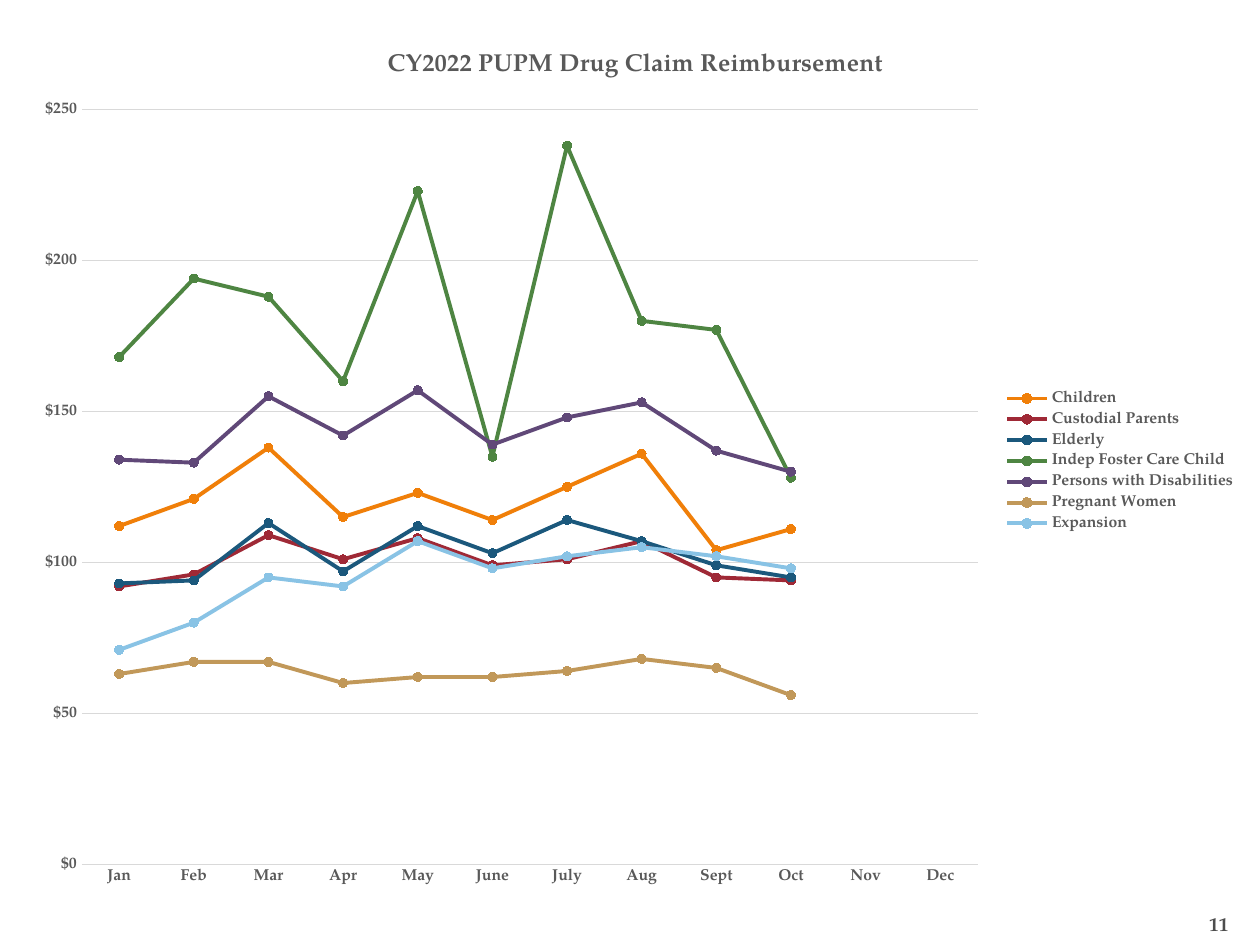
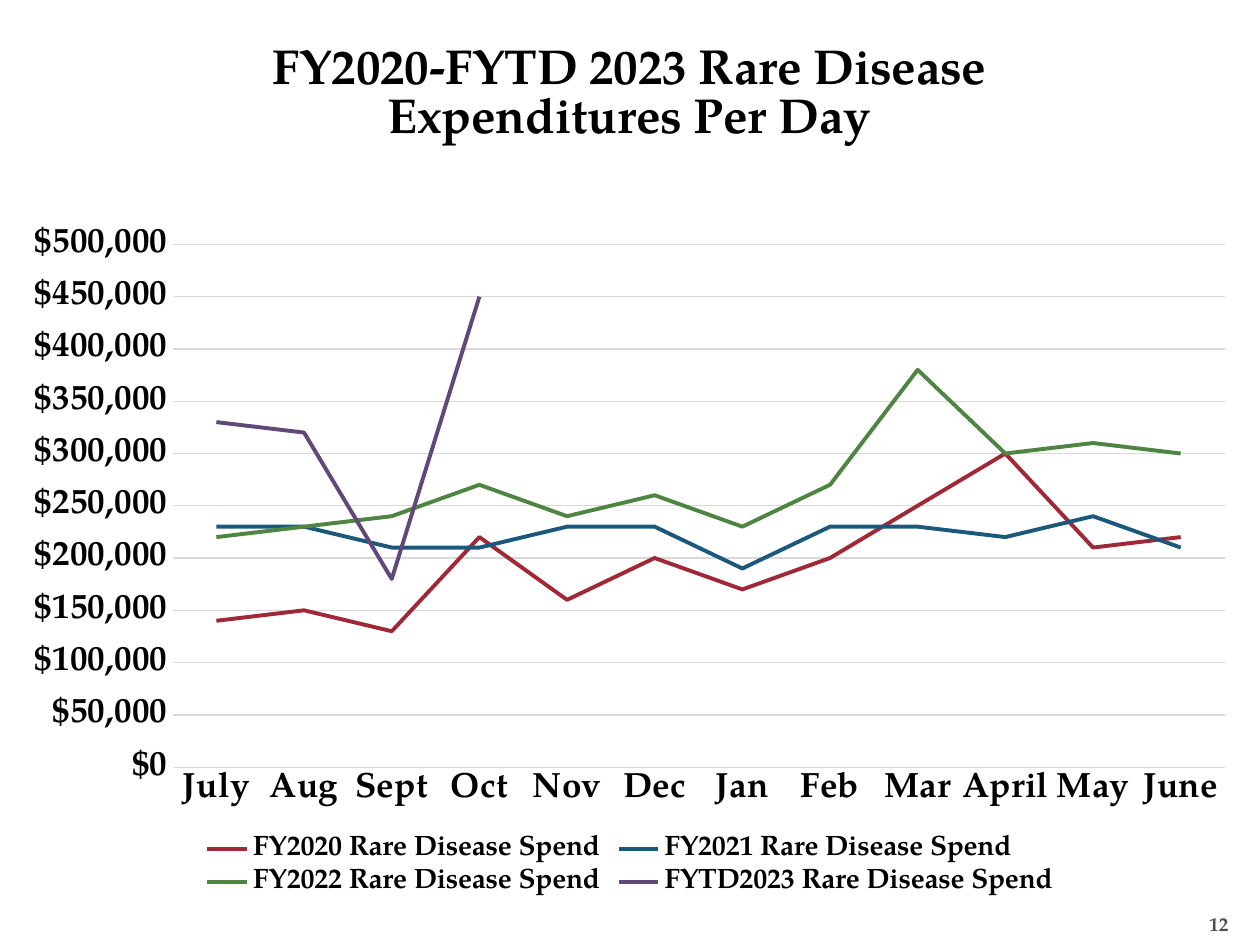
from pptx import Presentation
from pptx.chart.data import CategoryChartData
from pptx.dml.color import RGBColor
from pptx.enum.chart import (XL_CHART_TYPE as CT, XL_LEGEND_POSITION as LP,
                             XL_MARKER_STYLE as MS, XL_TICK_MARK as TM)
from pptx.enum.text import MSO_ANCHOR, PP_ALIGN
from pptx.oxml import parse_xml
from pptx.oxml.ns import nsdecls
from pptx.util import Inches, Pt

FONT = "TeX Gyre Pagella"
COLORS = {
    "orange": "F07F09", "red": "9F2936", "blue": "1B587C", "green": "4E8542",
    "purple": "604878", "tan": "C19859", "sky": "89C3E5",
    "grid": "D9D9D9", "gray": "595959", "number": "4D4D4D", "black": "000000",
}


def rgb(name):
    return RGBColor.from_string(COLORS[name])


def style_font(font, size, color):
    font.name, font.size, font.bold = FONT, Pt(size), True
    font.color.rgb = rgb(color)


def style_line(line, color, width):
    line.color.rgb = rgb(color)
    line.width = Pt(width)


def page_number(s, number, box):
    left, top, width, height = box
    tb = s.shapes.add_textbox(Inches(left), Inches(top), Inches(width), Inches(height))
    tf = tb.text_frame
    tf.word_wrap = True
    tf.vertical_anchor = MSO_ANCHOR.BOTTOM
    tf.margin_left = tf.margin_right = tf.margin_bottom = 0
    tf.margin_top = Inches(0.05)
    p = tf.paragraphs[0]
    p.alignment = PP_ALIGN.RIGHT
    r = p.add_run()
    r.text = str(number)
    style_font(r.font, 11, "number")


def layout_xml(chart_box, part_box, inner=False):
    """Manual layout placing part_box (slide inches) within chart_box."""
    left, top, width, height = chart_box
    x, y, w, h = part_box
    target = '<c:layoutTarget val="inner"/>' if inner else ""
    return parse_xml(
        f'<c:layout {nsdecls("c")}><c:manualLayout>{target}'
        '<c:xMode val="edge"/><c:yMode val="edge"/>'
        f'<c:x val="{(x - left) / width:.4f}"/><c:y val="{(y - top) / height:.4f}"/>'
        f'<c:w val="{w / width:.4f}"/><c:h val="{h / height:.4f}"/>'
        '</c:manualLayout></c:layout>')


def set_layout(parent, layout, position):
    for old in parent.findall(layout.tag):
        parent.remove(old)
    parent.insert(position, layout)


def style_axes(chart, size, color, top_value, step):
    cat, val = chart.category_axis, chart.value_axis
    for axis in (cat, val):
        axis.major_tick_mark = axis.minor_tick_mark = TM.NONE
        style_font(axis.tick_labels.font, size, color)
    style_line(cat.format.line, "grid", 0.75)
    val.format.line.fill.background()
    val.minimum_scale, val.maximum_scale, val.major_unit = 0, top_value, step
    val.has_major_gridlines = True
    style_line(val.major_gridlines.format.line, "grid", 0.75)
    val.tick_labels.number_format = '"$"#,##0'
    val.tick_labels.number_format_is_linked = False


def style_series(chart, colors, markers):
    for series, color in zip(chart.plots[0].series, colors):
        series.smooth = False
        style_line(series.format.line, color, 2.25)
        if not markers:
            series.marker.style = MS.NONE
            continue
        series.marker.style, series.marker.size = MS.CIRCLE, 5
        series.marker.format.fill.solid()
        series.marker.format.fill.fore_color.rgb = rgb(color)
        style_line(series.marker.format.line, color, 0.75)


def line_chart(s, box, title, title_style, months, lines, axis_style, scale,
               plot_box, legend_box, legend_pos, legend_style, markers=False):
    data = CategoryChartData(number_format='"$"#,##0')
    data.categories = months
    for name, _, values in lines:
        data.add_series(name, values + [None] * (len(months) - len(values)))
    kind = CT.LINE_MARKERS if markers else CT.LINE
    chart = s.shapes.add_chart(kind, *map(Inches, box), data).chart
    chart.font.name, chart.font.size = FONT, Pt(10)
    chart.font.color.rgb = rgb("black")

    # Title
    chart.has_title = True
    r = chart.chart_title.text_frame.paragraphs[0].add_run()
    r.text = title
    style_font(r.font, *title_style)
    chart.chart_title.include_in_layout = False

    # Axes and lines
    chart.plots[0].vary_by_categories = False
    style_axes(chart, *axis_style, *scale)
    style_series(chart, [color for _, color, _ in lines], markers)

    # Legend and plot positions
    chart.has_legend = True
    legend = chart.legend
    legend.position, legend.include_in_layout = legend_pos, False
    style_font(legend.font, *legend_style)
    set_layout(legend._element, layout_xml(box, legend_box), 1)
    plot_area = chart._chartSpace.chart.plotArea
    set_layout(plot_area, layout_xml(box, plot_box, inner=True), 0)


def reimbursement_slide(s):
    lines = [
        ("Children", "orange", [112, 121, 138, 115, 123, 114, 125, 136, 104, 111]),
        ("Custodial Parents", "red", [92, 96, 109, 101, 108, 99, 101, 107, 95, 94]),
        ("Elderly", "blue", [93, 94, 113, 97, 112, 103, 114, 107, 99, 95]),
        ("Indep Foster Care Child", "green",
         [168, 194, 188, 160, 223, 135, 238, 180, 177, 128]),
        ("Persons with Disabilities", "purple",
         [134, 133, 155, 142, 157, 139, 148, 153, 137, 130]),
        ("Pregnant Women", "tan", [63, 67, 67, 60, 62, 62, 64, 68, 65, 56]),
        ("Expansion", "sky", [71, 80, 95, 92, 107, 98, 102, 105, 102, 98]),
    ]
    months = "Jan Feb Mar Apr May June July Aug Sept Oct Nov Dec".split()
    line_chart(s, (0.17, 0.17, 9.75, 7), "CY2022 PUPM Drug Claim Reimbursement",
               (14, "gray"), months, lines, (9, "gray"), (250, 50),
               plot_box=(0.65, 0.87, 7.11, 5.99), legend_box=(7.93, 3.06, 1.92, 1.2),
               legend_pos=LP.RIGHT, legend_style=(9, "gray"), markers=True)


def rare_disease_slide(s):
    thousands = [
        ("FY2020", "red", [140, 150, 130, 220, 160, 200, 170, 200, 250, 300, 210, 220]),
        ("FY2021", "blue", [230, 230, 210, 210, 230, 230, 190, 230, 230, 220, 240, 210]),
        ("FY2022", "green", [220, 230, 240, 270, 240, 260, 230, 270, 380, 300, 310, 300]),
        ("FYTD2023", "purple", [330, 320, 180, 450]),
    ]
    lines = [(f"{year} Rare Disease Spend", color, [v * 1000 for v in values])
             for year, color, values in thousands]
    months = "July Aug Sept Oct Nov Dec Jan Feb Mar April May June".split()
    line_chart(s, (0.08, 0.08, 9.83, 7.08),
               "FY2020-FYTD 2023 Rare Disease Expenditures Per Day",
               (28, "black"), months, lines, (20, "black"), (500000, 50000),
               plot_box=(1.37, 1.94, 8.35, 4.15), legend_box=(1.57, 6.58, 6.86, 0.58),
               legend_pos=LP.BOTTOM, legend_style=(16, "black"))


def main():
    prs = Presentation()
    prs.slide_width, prs.slide_height = Inches(10), Inches(7.5)
    for number, build in enumerate((reimbursement_slide, rare_disease_slide), 11):
        s = prs.slides.add_slide(prs.slide_layouts[6])
        page_number(s, number, (9.25, 7.02, 0.5, 0.4))
        build(s)
    prs.save("out.pptx")


if __name__ == "__main__":
    main()
